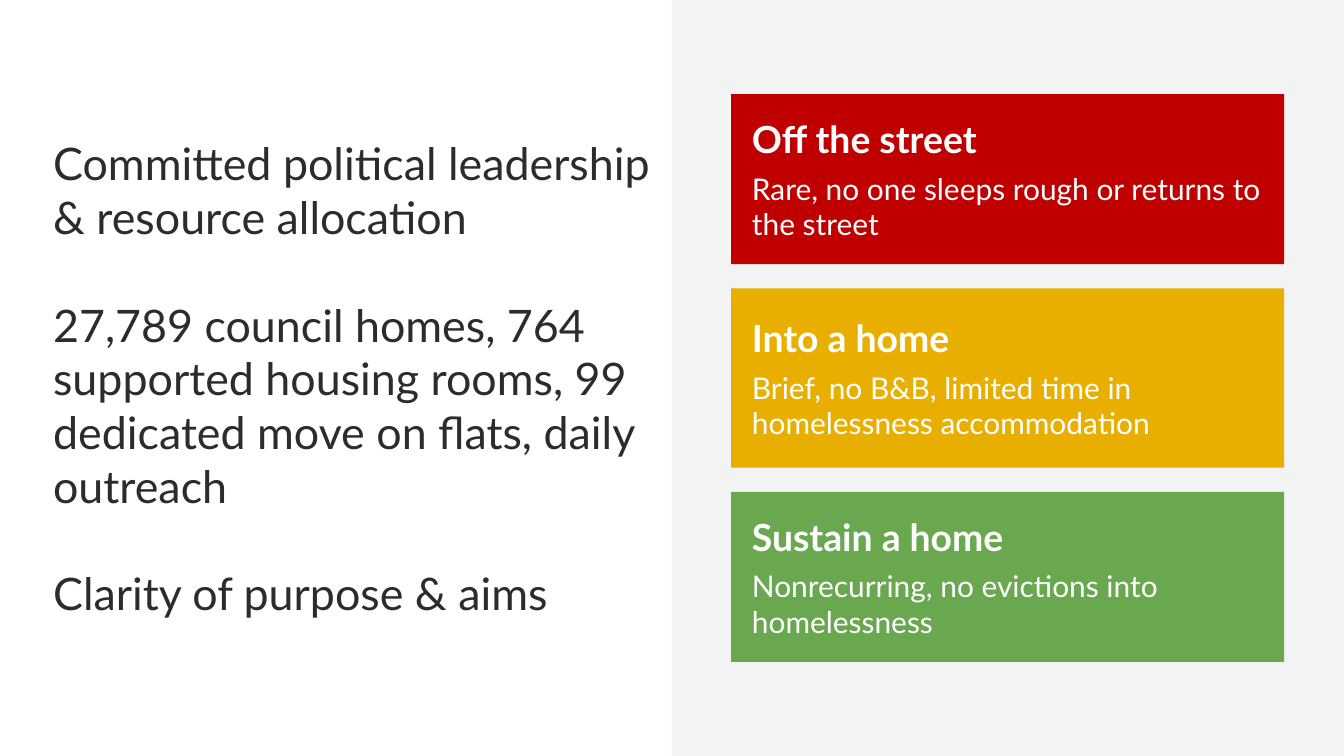
"""Build a slide pairing commitments with three colour-coded housing aims."""
from dataclasses import dataclass

from pptx import Presentation
from pptx.dml.color import RGBColor
from pptx.enum import shapes, text
from pptx.util import Inches, Pt

FONT = "Lato"
WHITE = RGBColor(0xFF, 0xFF, 0xFF)
PANEL = RGBColor(0xF3, 0xF3, 0xF3)
INK = RGBColor(0x2C, 0x2C, 0x2C)
RED = RGBColor(0xC0, 0x00, 0x00)
AMBER = RGBColor(0xE9, 0xAF, 0x00)
GREEN = RGBColor(0x6A, 0xA8, 0x4F)

CARD_LEFT, CARD_TOP, CARD_WIDTH, CARD_GAP = 10.88, 1.4, 8.23, 0.36


@dataclass
class Card:
    title: str
    detail: str
    color: RGBColor
    height: float


COMMITMENTS = [
    "Committed political leadership & resource allocation",
    "27,789 council homes, 764 supported housing rooms, "
    "99 dedicated move on flats, daily outreach",
    "Clarity of purpose & aims",
]
CARDS = [
    Card("Off the street", "Rare, no one sleeps rough or returns to the street", RED, 2.53),
    Card("Into a home", "Brief, no B&B, limited time in homelessness accommodation", AMBER, 2.67),
    Card("Sustain a home", "Nonrecurring, no evictions into homelessness", GREEN, 2.53),
]


def add_rect(s, left: float, top: float, width: float, height: float, color: RGBColor):
    sp = s.shapes.add_shape(shapes.MSO_SHAPE.RECTANGLE, Inches(left), Inches(top),
                            Inches(width), Inches(height))
    sp.shadow.inherit = False
    sp.fill.solid()
    sp.fill.fore_color.rgb = color
    sp.line.fill.background()
    return sp


def set_frame(tf, inset: float) -> None:
    tf.word_wrap = True
    tf.vertical_anchor = text.MSO_ANCHOR.MIDDLE
    tf.margin_left = tf.margin_top = tf.margin_right = tf.margin_bottom = Inches(inset)


def write(p, content: str, size: float, color: RGBColor, bold: bool = False) -> None:
    p.text = content
    p.alignment = text.PP_ALIGN.LEFT
    p.font.name = FONT
    p.font.size = Pt(size)
    p.font.bold = bold
    p.font.color.rgb = color


def add_commitments(s) -> None:
    tf = s.shapes.add_textbox(Inches(0.79), 0, Inches(9.02), Inches(11.25)).text_frame
    set_frame(tf, 0)
    for i, content in enumerate(COMMITMENTS):
        p = tf.add_paragraph() if i else tf.paragraphs[0]
        write(p, content, 48, INK)
        if i:
            p.space_before = Pt(57.6)


def add_card(s, card: Card, top: float) -> None:
    tf = add_rect(s, CARD_LEFT, top, CARD_WIDTH, card.height, card.color).text_frame
    set_frame(tf, 0.31)
    write(tf.paragraphs[0], card.title, 40, WHITE, bold=True)
    p = tf.add_paragraph()
    write(p, card.detail, 32, WHITE)
    p.space_before = p.space_after = Pt(10)


def main() -> None:
    prs = Presentation()
    prs.slide_width, prs.slide_height = Inches(20), Inches(11.25)
    s = prs.slides.add_slide(prs.slide_layouts[6])
    add_rect(s, 10, 0, 10, 11.25, PANEL)
    add_commitments(s)
    top = CARD_TOP
    for card in CARDS:
        add_card(s, card, top)
        top += card.height + CARD_GAP
    prs.save("out.pptx")


if __name__ == "__main__":
    main()
